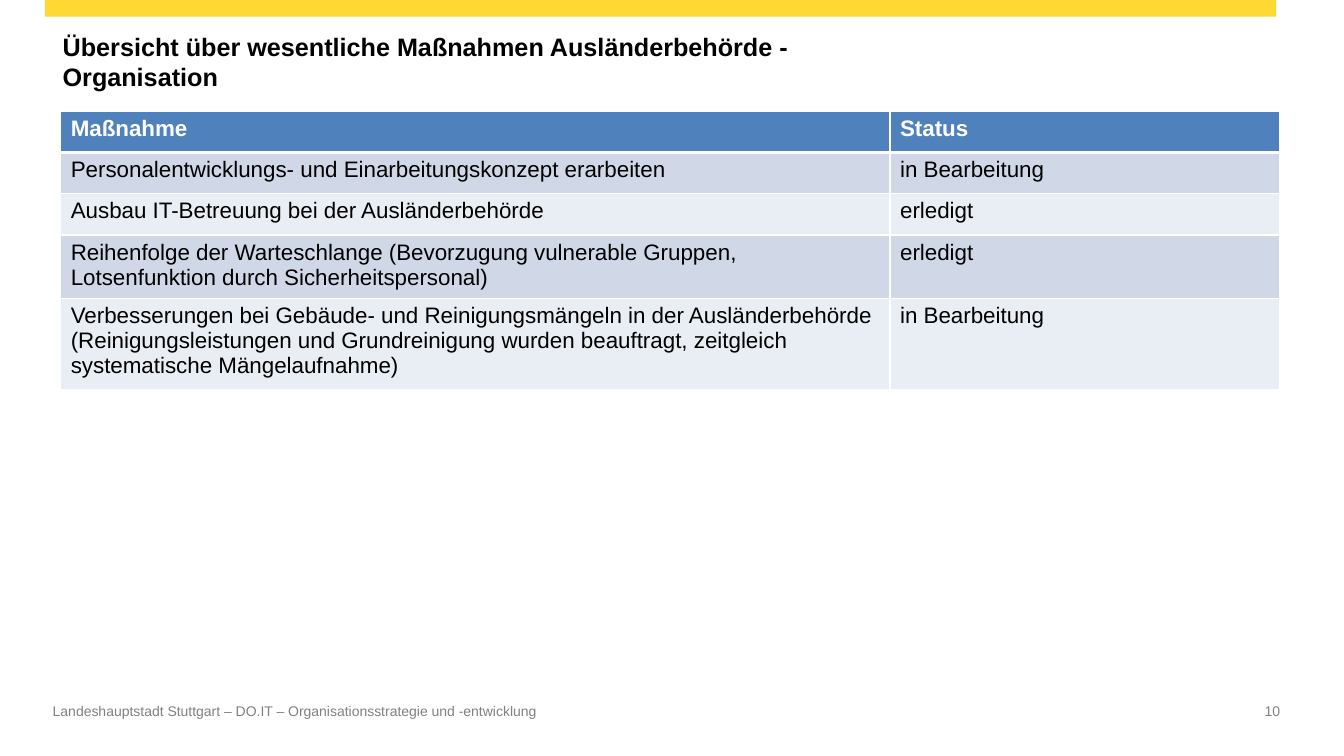
import pptx
import pptx.dml.color
import pptx.enum.shapes
import pptx.enum.text
import pptx.oxml
import pptx.oxml.ns
import pptx.util
from pptx.util import Cm

COLORS = {
    "accent": "FFD833",
    "header": "4F81BD",
    "band_dark": "D0D8E8",
    "band_light": "E9EDF4",
    "white": "FFFFFF",
    "black": "000000",
    "grey": "818181",
}
MEASURES = [
    ("Maßnahme", "Status"),
    ("Personalentwicklungs- und Einarbeitungskonzept erarbeiten", "in Bearbeitung"),
    ("Ausbau IT-Betreuung bei der Ausländerbehörde", "erledigt"),
    ("Reihenfolge der Warteschlange (Bevorzugung vulnerable Gruppen, "
     "Lotsenfunktion durch Sicherheitspersonal)", "erledigt"),
    ("Verbesserungen bei Gebäude- und Reinigungsmängeln in der Ausländerbehörde "
     "(Reinigungsleistungen und Grundreinigung wurden beauftragt, zeitgleich "
     "systematische Mängelaufnahme)", "in Bearbeitung"),
]


def rgb(name):
    return pptx.dml.color.RGBColor.from_string(COLORS[name])


class SlideBuilder:
    def __init__(self, slide, font="Arial"):
        self.s = slide
        self.font = font

    def fill_text(self, tf, text, size, color, bold=False, align="LEFT"):
        p = tf.paragraphs[0]
        p.alignment = getattr(pptx.enum.text.PP_ALIGN, align)
        r = p.add_run()
        r.text = text
        style = {"name": self.font, "size": pptx.util.Pt(size), "bold": bold}
        for key, value in style.items():
            setattr(r.font, key, value)
        r.font.color.rgb = rgb(color)

    def bar(self, left, top, width, height, color):
        sp = self.s.shapes.add_shape(pptx.enum.shapes.MSO_SHAPE.RECTANGLE,
                                     Cm(left), Cm(top), Cm(width), Cm(height))
        sp.shadow.inherit = False
        sp.fill.solid()
        sp.fill.fore_color.rgb = rgb(color)
        sp.line.fill.background()

    def text(self, box, text, size, color, inset=True, anchor="TOP", **style):
        tf = self.s.shapes.add_textbox(*map(Cm, box)).text_frame
        tf.word_wrap = True
        tf.vertical_anchor = getattr(pptx.enum.text.MSO_ANCHOR, anchor)
        if not inset:
            for side in ("left", "top", "right", "bottom"):
                setattr(tf, f"margin_{side}", 0)
        self.fill_text(tf, text, size, color, **style)

    def borders(self, cell, widths):
        """Draw white cell borders; widths maps L, R, T, B to points."""
        tcPr = cell._tc.get_or_add_tcPr()
        for i, (side, width) in enumerate(widths.items()):
            tcPr.insert(i, pptx.oxml.parse_xml(
                f'<a:ln{side} {pptx.oxml.ns.nsdecls("a")} w="{pptx.util.Pt(width)}">'
                f'<a:solidFill><a:srgbClr val="{COLORS["white"]}"/></a:solidFill>'
                f'</a:ln{side}>'))

    def table(self, left, top, col_widths, row_height, rows, size):
        table = self.s.shapes.add_table(
            len(rows), len(col_widths), Cm(left), Cm(top),
            Cm(sum(col_widths)), Cm(row_height * len(rows))).table
        for col, width in zip(table.columns, col_widths):
            col.width = Cm(width)
        for i, row in enumerate(rows):
            table.rows[i].height = Cm(row_height)
            header = i == 0
            fill = "header" if header else ("band_light", "band_dark")[i % 2]
            for j, text in enumerate(row):
                cell = table.cell(i, j)
                cell.fill.solid()
                cell.fill.fore_color.rgb = rgb(fill)
                self.fill_text(cell.text_frame, text, size,
                               "white" if header else "black", bold=header)
                self.borders(cell, {"L": 1, "R": 1, "T": 3 if i == 1 else 1,
                                    "B": 3 if header else 1})


def main():
    prs = pptx.Presentation()
    prs.slide_width, prs.slide_height = Cm(33.87), Cm(19.05)
    b = SlideBuilder(prs.slides.add_slide(prs.slide_layouts[6]))

    b.bar(1.13, 0, 31.03, 0.42, "accent")
    b.text((29.46, 17.7, 2.8, 1), "10", 10, "grey", inset=False, align="RIGHT")
    b.table(1.53, 2.8, (20.9, 9.83), 1.04, MEASURES, 16)
    b.text((1.33, 17.7, 18.67, 1),
           "Landeshauptstadt Stuttgart – DO.IT – Organisationsstrategie und -entwicklung",
           10, "grey", inset=False)
    b.text((1.33, 0.72, 20.7, 1.65),
           "Übersicht über wesentliche Maßnahmen Ausländerbehörde - Organisation",
           18, "black", anchor="MIDDLE", bold=True)
    prs.save("out.pptx")


if __name__ == "__main__":
    main()
